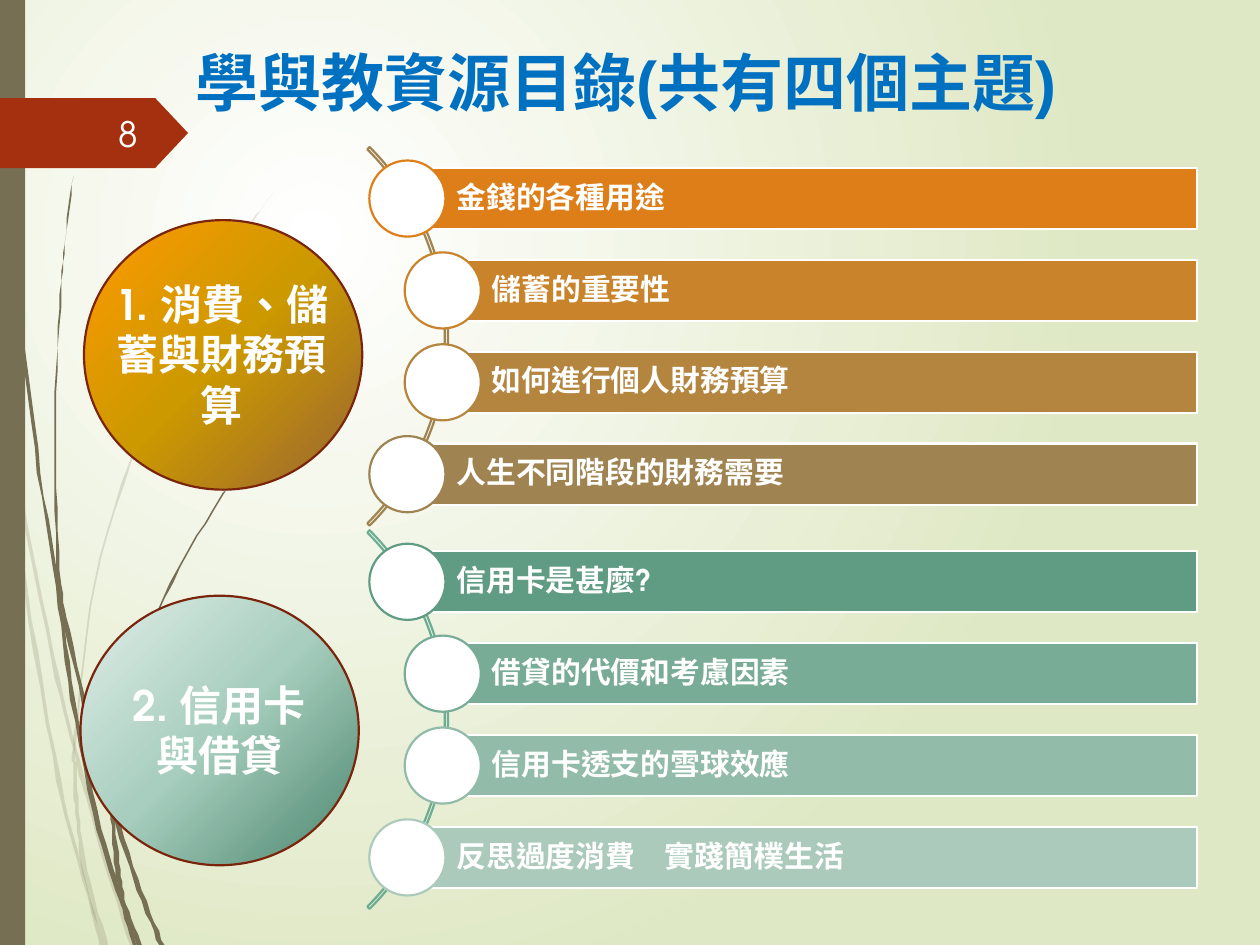
from lxml.etree import SubElement
from pptx import Presentation
from pptx.dml.color import RGBColor
from pptx.enum.lang import MSO_LANGUAGE_ID
from pptx.enum.shapes import MSO_SHAPE
from pptx.enum.text import MSO_ANCHOR, MSO_AUTO_SIZE, PP_ALIGN
from pptx.oxml.ns import qn
from pptx.util import Pt

FACE = "TeX Gyre Adventor"
WHITE, OLIVE, RED, BROWN, BLUE = "FFFFFF", "766F54", "A53010", "7A240C", "0070C0"

# Stems: centre x, y and width along each one
PALE = [
    [(0, 209, 1), (4.7, 240, 1), (7, 268, 1.5), (14.8, 338, 2.2),
     (33.5, 446, 2.2), (46, 495, 1.8), (58, 541, 2)],
    [(7.2, 248, 0), (9.7, 271, 2), (29.9, 375, 2.2), (43.7, 432, 2.2),
     (62.3, 499, 2.2), (76.3, 541, 2.9)],
    [(156.2, 110, 0.3), (144.7, 126, 0.6), (134.3, 142, 0.8), (114.1, 176, 1),
     (79.6, 251, 1), (54.4, 332, 1.2), (43.2, 420, 1.4), (42.8, 439, 2),
     (44.3, 465, 2.2), (48.6, 498, 2.5), (60.5, 541, 2.9)],
]
DARK = [
    [(1.8, 0, 0.7), (2.5, 34, 0.7), (4, 79, 0.8), (10.4, 167, 1),
     (20.5, 256, 2), (32.6, 335, 1.8), (41.8, 400, 2.9), (56.9, 474, 2.9),
     (69, 514, 2), (76.7, 540, 2.2)],
    [(41.8, 101, 0.2), (37.1, 139, 0.7), (34.2, 176, 0.8), (31.3, 251, 1),
     (33.5, 326, 2), (38.5, 360, 2.5), (54, 425, 2.9), (65.1, 464, 3),
     (79.9, 509, 2.9), (92.2, 540, 2.9)],
    [(155.2, 248, 0.7), (137.5, 269, 0.8), (121.3, 292, 0.9), (93.6, 342, 1.4),
     (73.4, 397, 1.5), (64.4, 455, 2.2), (64.5, 468, 2.2), (67.3, 497, 3),
     (70.9, 517, 3), (79.6, 540, 3.6)],
]

# Topic lists: middle y, arc colour, rows
LISTS = [
    (192.2, "9F8351", [
        ("金錢的各種用途", "DE7E18"), ("儲蓄的重要性", "C9832B"),
        ("如何進行個人財務預算", "B4853E"), ("人生不同階段的財務需要", "9F8351")]),
    (411.2, "6DAD93", [
        ("信用卡是甚麼?", "609C84"), ("借貸的代價和考慮因素", "79AC96"),
        ("信用卡透支的雪球效應", "92BBA9"), ("反思過度消費　實踐簡樸生活", "ABCABC")]),
]


def color(code):
    return RGBColor.from_string(code)


def curve(points, steps=6):
    """Smooth run through the points (Catmull-Rom)."""
    ends = [points[0], *points, points[-1]]
    for a, b, c, d in zip(ends, ends[1:], ends[2:], ends[3:]):
        for t in (n / steps for n in range(steps)):
            yield tuple(
                q + t * (r - p + t * (2*p - 5*q + 4*r - s + t * (3*q - p - 3*r + s))) / 2
                for p, q, r, s in zip(a, b, c, d))
    yield points[-1]


class Deck:
    def __init__(self):
        self.prs = Presentation()
        self.prs.slide_width, self.prs.slide_height = Pt(720), Pt(540)
        self.slide = self.prs.slides.add_slide(self.prs.slide_layouts[5])
        self.shapes = self.slide.shapes

    def paint(self, shape, fill, line=None):
        shape.shadow.inherit = False
        if fill:
            shape.fill.solid()
            shape.fill.fore_color.rgb = color(fill)
        else:
            shape.fill.background()
        if line:
            shape.line.color.rgb = color(line)
            shape.line.width = Pt(1.25)
        else:
            shape.line.fill.background()

    def shape(self, kind, x, y, w, h, fill, line=None):
        item = self.shapes.add_shape(kind, Pt(x), Pt(y), Pt(w), Pt(h))
        self.paint(item, fill, line)
        return item

    def blend(self, owner, fill, stops, angle=None, center=None):
        fill.gradient()
        grad = owner.element.xpath(".//a:gradFill")[0]
        for child in list(grad):
            grad.remove(child)
        group = SubElement(grad, qn("a:gsLst"))
        for spot, code in stops:
            stop = SubElement(group, qn("a:gs"), pos=str(spot * 1000))
            SubElement(stop, qn("a:srgbClr"), val=code)
        if center:
            way = SubElement(grad, qn("a:path"), path="circle")
            SubElement(way, qn("a:fillToRect"),
                       {k: str(v * 1000) for k, v in zip("ltrb", center)})
        else:
            SubElement(grad, qn("a:lin"), ang=str(angle * 60000), scaled="0")

    def stem(self, points, alpha=None):
        run = list(curve(points))
        edge = [(x - w / 2, y) for x, y, w in run]
        edge += [(x + w / 2, y) for x, y, w in reversed(run)]
        pen = self.shapes.build_freeform(*edge[0], scale=Pt(1))
        pen.add_line_segments(edge[1:], close=True)
        item = pen.convert_to_shape()
        self.paint(item, OLIVE)
        if alpha:
            tint = item.element.xpath("./p:spPr/a:solidFill/a:srgbClr")[0]
            SubElement(tint, qn("a:alpha"), val=str(alpha * 1000))

    def style(self, item, text, size, code=WHITE, bold=True, face=FACE,
              align=PP_ALIGN.LEFT, anchor=MSO_ANCHOR.TOP):
        frame = item.text_frame
        frame.text = text
        frame.word_wrap, frame.auto_size = True, MSO_AUTO_SIZE.NONE
        frame.vertical_anchor = anchor
        for para in frame.paragraphs:
            para.alignment = align
            for run in para.runs:
                font = run.font
                font.size, font.bold, font.name = Pt(size), bold, face
                font.color.rgb = color(code)
                font.language_id = MSO_LANGUAGE_ID.TRADITIONAL_CHINESE
        return frame

    def label(self, x, y, w, h, text, size, **look):
        box = self.shapes.add_textbox(Pt(x), Pt(y), Pt(w), Pt(h))
        self.style(box, text, size, **look)

    def title(self, x, y, w, h, text):
        item = self.shapes.title
        item.left, item.top, item.width, item.height = Pt(x), Pt(y), Pt(w), Pt(h)
        self.style(item, text, 36, BLUE, face="Arial")

    def topics(self, mid, tone, rows, step=52.5, high=35, dot=43.5, size=306):
        arc = self.shape(MSO_SHAPE.BLOCK_ARC, 103 - size / 2, mid - size / 2,
                         size, size, None, tone)
        for n, value in enumerate((189, 27, 0.006)):
            arc.adjustments[n] = value
        for n, (text, code) in enumerate(rows):
            x = 253 if n in (1, 2) else 232.8
            y = mid + (n - (len(rows) - 1) / 2) * step
            bar = self.shape(MSO_SHAPE.RECTANGLE, x, y - high / 2,
                             684 - x, high, code, WHITE)
            frame = self.style(bar, text, 17, anchor=MSO_ANCHOR.MIDDLE)
            frame.margin_left = Pt(28)
            frame.paragraphs[0].line_spacing = 0.9
            self.shape(MSO_SHAPE.OVAL, x - dot / 2, y - dot / 2, dot, dot, WHITE, code)

    def theme(self, x, y, stops, **way):
        disc = self.shape(MSO_SHAPE.OVAL, x, y, 159, 154, WHITE, BROWN)
        self.blend(disc, disc.fill, stops, **way)


def main():
    deck = Deck()

    # Backdrop
    deck.blend(deck.slide, deck.slide.background.fill,
               [(0, WHITE), (100, "DFE8C4")], center=(50, 50, 100, 100))
    for points in PALE:
        deck.stem(points, 20)
    for points in DARK:
        deck.stem(points)
    deck.shape(MSO_SHAPE.RECTANGLE, 0, 0, 14.4, 540, OLIVE)

    # Page number
    tag = deck.shape(MSO_SHAPE.PENTAGON, 0, 56, 107.5, 40, RED)
    tag.adjustments[0] = 0.47
    deck.label(40, 62, 46, 29, "8", 20, code="FEFFFF", bold=False,
               align=PP_ALIGN.RIGHT, anchor=MSO_ANCHOR.MIDDLE)

    # Title and topic lists
    deck.title(104.5, 21, 519, 59, "學與教資源目錄(共有四個主題)")
    for mid, tone, rows in LISTS:
        deck.topics(mid, tone, rows)

    # Themes
    deck.theme(48, 125.8, [(0, "FF9900"), (50, "CC9900"), (100, "996633")], angle=45)
    deck.theme(46, 340.4, [(0, "4B866E"), (50, "A6CDBD"), (100, "E1EEE9")],
               center=(100, 100, 0, 0))
    deck.label(58, 155.5, 137.5, 94, "1. 消費、儲蓄與財務預算", 24, align=PP_ALIGN.CENTER)
    deck.label(64, 384.5, 122.5, 65.5, "2. 信用卡\n與借貸", 24, align=PP_ALIGN.CENTER)

    deck.prs.save("out.pptx")


if __name__ == "__main__":
    main()
